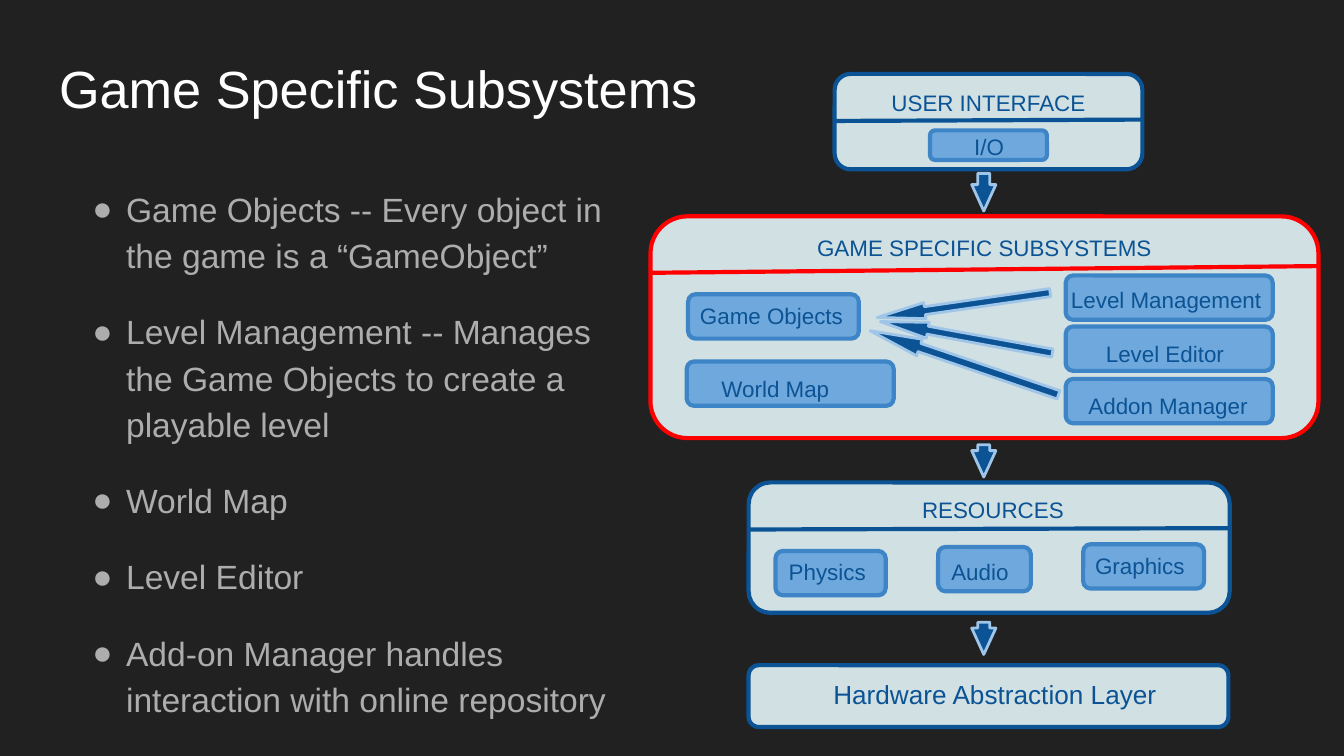
from dataclasses import dataclass

from lxml import etree
from pptx import Presentation
from pptx.dml.color import RGBColor
from pptx.enum.shapes import MSO_CONNECTOR, MSO_SHAPE
from pptx.enum.text import MSO_ANCHOR, MSO_AUTO_SIZE, PP_ALIGN
from pptx.oxml.ns import qn
from pptx.util import Inches, Pt

ROUNDED = MSO_SHAPE.ROUNDED_RECTANGLE
DOWN_ARROW = MSO_SHAPE.DOWN_ARROW
STRAIGHT = MSO_CONNECTOR.STRAIGHT
TOP = MSO_ANCHOR.TOP
NO_FIT = MSO_AUTO_SIZE.NONE
LEFT, CENTER = PP_ALIGN.LEFT, PP_ALIGN.CENTER

WIDTH = Inches(10)
HEIGHT = WIDTH * 9 // 16
COLUMNS = 100
CELL = WIDTH // COLUMNS

FONT = "Arial"
BACKGROUND, WHITE, GRAY = "212121", "FFFFFF", "ADADAD"
NAVY, RED, PALE = "0B5394", "FF0000", "D0E0E3"
BLUE, MID_BLUE, LIGHT_BLUE = "6FA8DC", "3D85C6", "9FC5E8"


@dataclass(frozen=True)
class Area:
    column: float
    row: float
    columns: float
    rows: float

    def lengths(self) -> tuple[int, ...]:
        return tuple(round(value * CELL) for value in
                     (self.column, self.row, self.columns, self.rows))


@dataclass(frozen=True)
class Caption:
    text: str
    area: Area
    align: PP_ALIGN = LEFT
    size: float = 12
    indent: float = 0


@dataclass(frozen=True)
class Panel:
    area: Area
    line: str = NAVY
    divider: tuple[float, float] | None = None


@dataclass(frozen=True)
class Arrow:
    area: Area
    head: float = 1.09
    rotation: float = 0


PANELS = [
    Panel(Area(62.1, 5.5, 22.9, 7.1), divider=(9, 8.9)),
    Panel(Area(48.4, 16.1, 49.7, 16.5), RED, (20.3, 19.8)),
    Panel(Area(55.7, 35.9, 35.8, 9.7), divider=(39.4, 39.3)),
    Panel(Area(55.7, 49.5, 35.7, 4.6)),
]

MODULE_ROWS = 3.3
MANAGERS = [Area(79.3, row, 15.4, MODULE_ROWS) for row in (20.5, 24.3, 28.2)]
MODULES = [
    Area(69.2, 9.7, 8.7, 2.2),
    Area(51.2, 21.9, 12.7, MODULE_ROWS),
    Area(51.1, 26.9, 15.4, MODULE_ROWS),
    *MANAGERS,
    Area(57.7, 41, 8.2, MODULE_ROWS),
    Area(69.8, 40.7, 6.9, MODULE_ROWS),
    Area(80.6, 40.5, 9, MODULE_ROWS),
]

CAPTIONS = [
    Caption("USER INTERFACE", Area(64.3, 5.6, 18.5, 4.6), CENTER),
    Caption("I/O", Area(70.4, 8.9, 6.4, 3.2), CENTER),
    Caption("GAME SPECIFIC SUBSYSTEMS", Area(51.3, 16.4, 43.9, 5.8), CENTER),
    Caption("Game Objects", Area(51.1, 21.5, 12.7, 2.7)),
    Caption("World Map", Area(52.7, 26.9, 12, 3.3)),
    Caption("Level Management", Area(78.7, 20.3, 17.5, 3.3)),
    Caption("Level Editor", Area(81.3, 24.3, 11.4, 3.3)),
    Caption("Addon Manager", Area(80, 28.2, 14.1, 3.3)),
    Caption("RESOURCES", Area(66.2, 35.9, 14.8, 3.4), indent=1.4),
    Caption("Physics", Area(57.7, 40.5, 8.2, 3.7)),
    Caption("Audio", Area(69.8, 40.5, 6.9, 2.7)),
    Caption("Graphics", Area(80.5, 40.1, 9, 2.7)),
    Caption("Hardware Abstraction Layer", Area(59.4, 49.5, 28.2, 2.8),
            size=14, indent=1.6),
]

ARROWS = [
    Arrow(Area(72.3, 12.9, 1.8, 2.8)),
    Arrow(Area(72.3, 33.1, 1.8, 2.4)),
    Arrow(Area(72.3, 46.3, 1.8, 2.4)),
    Arrow(Area(71.1, 19.6, 1.3, 14.8), 2.98, 108.8),
    Arrow(Area(71.1, 16.2, 1.2, 13), 2.98, 81.8),
    Arrow(Area(71.3, 18.6, 1.2, 13), 2.98, 100.4),
]

TOPICS = [
    "Game Objects -- Every object in the game is a “GameObject”",
    "Level Management -- Manages the Game Objects to create a playable level",
    "World Map",
    "Level Editor",
    "Add-on Manager handles interaction with online repository",
]


def rgb(color: str) -> RGBColor:
    return RGBColor.from_string(color)


def place(box, area: Area) -> None:
    box.left, box.top, box.width, box.height = area.lengths()


def add_bullet(para, color: str) -> None:
    properties = para._p.get_or_add_pPr()
    properties.set("marL", str(Inches(0.5)))
    properties.set("indent", str(-Inches(0.25)))
    bullet_color = etree.SubElement(properties, qn("a:buClr"))
    etree.SubElement(bullet_color, qn("a:srgbClr"), val=color)
    etree.SubElement(properties, qn("a:buFont"), typeface=FONT)
    etree.SubElement(properties, qn("a:buChar"), char="●")


def write(box, *lines: str, size: float = 12, color: str = NAVY,
          align: PP_ALIGN = LEFT, indent: float = 0,
          bulleted: bool = False) -> None:
    frame = box.text_frame
    frame.word_wrap = True
    frame.auto_size = NO_FIT
    frame.vertical_anchor = TOP
    frame.margin_top = frame.margin_right = frame.margin_bottom = CELL
    frame.margin_left = round((1 + indent) * CELL)
    for index, line in enumerate(lines):
        para = frame.add_paragraph() if index else frame.paragraphs[0]
        para.alignment = align
        if bulleted:
            para.line_spacing = 1.15
            para.space_after = Pt(16)
            add_bullet(para, color)
        span = para.add_run()
        span.text = line
        span.font.name = FONT
        span.font.size = Pt(size)
        span.font.color.rgb = rgb(color)


def add_filled(page, kind: MSO_SHAPE, area: Area, fill: str, line: str,
               weight: float = 2.25):
    shape = page.shapes.add_shape(kind, *area.lengths())
    shape.shadow.inherit = False
    shape.fill.solid()
    shape.fill.fore_color.rgb = rgb(fill)
    shape.line.color.rgb = rgb(line)
    shape.line.width = Pt(weight)
    return shape


def add_panel(page, panel: Panel) -> None:
    add_filled(page, ROUNDED, panel.area, PALE, panel.line)
    if panel.divider:
        left, _, width, _ = panel.area.lengths()
        start, end = (round(row * CELL) for row in panel.divider)
        divider = page.shapes.add_connector(STRAIGHT, left, start, left + width, end)
        divider.line.color.rgb = rgb(panel.line)
        divider.line.width = Pt(2.25)
        etree.SubElement(divider._element.spPr, qn("a:effectLst"))


def add_caption(page, caption: Caption) -> None:
    box = page.shapes.add_textbox(*caption.area.lengths())
    write(box, caption.text, size=caption.size, align=caption.align,
          indent=caption.indent)


def add_arrow(page, arrow: Arrow) -> None:
    shape = add_filled(page, DOWN_ARROW, arrow.area, NAVY, LIGHT_BLUE, 1.5)
    shape.adjustments[1] = arrow.head
    shape.rotation = arrow.rotation


def main() -> None:
    deck = Presentation()
    deck.slide_width, deck.slide_height = WIDTH, HEIGHT
    page = deck.slides.add_slide(deck.slide_layouts.get_by_name("Title Only"))
    page.background.fill.solid()
    page.background.fill.fore_color.rgb = rgb(BACKGROUND)

    place(page.shapes.title, Area(3.4, 3.2, 93.2, 6.3))
    write(page.shapes.title, "Game Specific Subsystems", size=28, color=WHITE)
    topics = page.shapes.add_textbox(*Area(3.4, 12.6, 45.4, 37.4).lengths())
    write(topics, *TOPICS, size=18, color=GRAY, bulleted=True)

    for panel in PANELS:
        add_panel(page, panel)
    for module in MODULES:
        add_filled(page, ROUNDED, module, BLUE, MID_BLUE)
    for caption in CAPTIONS:
        add_caption(page, caption)
    for arrow in ARROWS:
        add_arrow(page, arrow)
    deck.save("out.pptx")


if __name__ == "__main__":
    main()
